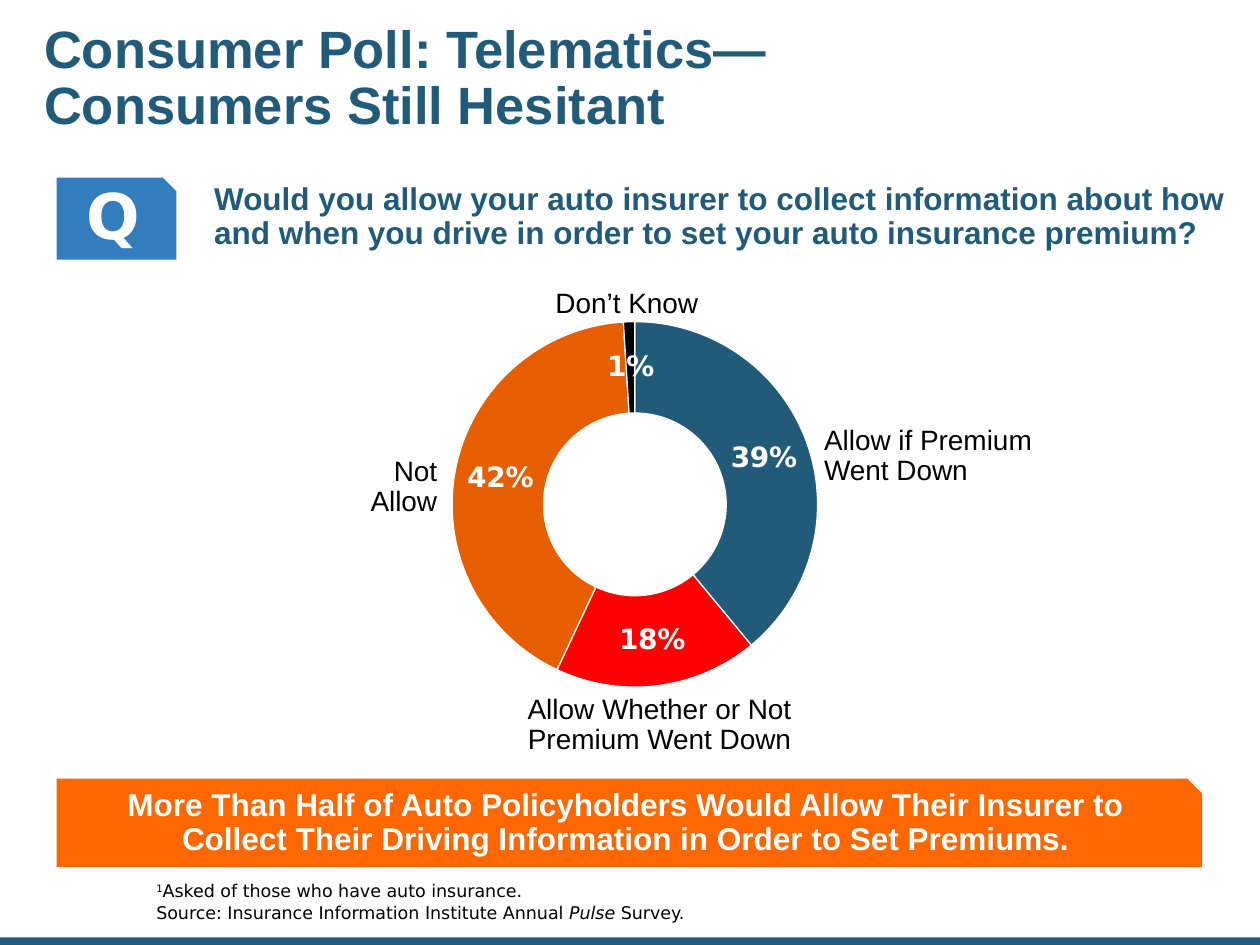
from copy import deepcopy
from dataclasses import dataclass

from lxml.etree import SubElement
from pptx import Presentation
from pptx.chart.data import CategoryChartData
from pptx.dml.color import RGBColor
from pptx.enum.chart import XL_CHART_TYPE
from pptx.enum.shapes import MSO_SHAPE
from pptx.enum.text import MSO_ANCHOR, MSO_AUTO_SIZE, PP_ALIGN
from pptx.oxml.ns import qn
from pptx.util import Inches, Pt


@dataclass(frozen=True)
class Theme:
    """Colours, fonts and type sizes of the slide."""
    navy: str = "225A7A"
    blue: str = "337DBE"
    orange: str = "FF6801"
    rust: str = "E75E01"
    red: str = "FF0000"
    black: str = "000000"
    white: str = "FFFFFF"
    sans: str = "Arial"
    wide: str = "DejaVu Sans"
    title: int = 30
    letter: int = 36
    lead: int = 18
    label: int = 16
    note: int = 10


THEME = Theme()
LEFT, MID, RIGHT = PP_ALIGN.LEFT, PP_ALIGN.CENTER, PP_ALIGN.RIGHT


def paint(font, size, color, face, bold=False):
    """Set the size, colour, face and weight of a font."""
    font.size, font.name, font.bold = Pt(size), face, bold
    font.color.rgb = RGBColor.from_string(color)


def write(shape, *paras, size=THEME.label, color=THEME.black, face=THEME.sans,
          bold=False, align=LEFT, anchor=MSO_ANCHOR.MIDDLE, pad=(0, 0, 0, 0),
          line=0.9, gap=0):
    """Fill a shape with paragraphs, each a string or a list of (text, mark) runs."""
    frame = shape.text_frame
    frame.word_wrap, frame.auto_size = True, MSO_AUTO_SIZE.NONE
    frame.vertical_anchor = anchor
    (frame.margin_left, frame.margin_top,
     frame.margin_right, frame.margin_bottom) = map(Inches, pad)
    for rank, text in enumerate(paras):
        para = frame.add_paragraph() if rank else frame.paragraphs[0]
        para.alignment, para.line_spacing = align, line
        para.space_before = Pt(gap if rank else 0)
        if isinstance(text, str):
            para.text = text
        else:
            for words, mark in text:
                run = para.add_run()
                run.text = words
                if mark == "italic":
                    run.font.italic = True
                elif mark == "super":
                    run._r.get_or_add_rPr().set("baseline", "30000")
        for run in para.runs:
            paint(run.font, size, color, face, bold)
        for brk in para._p.findall(qn("a:br")):
            brk.insert(0, deepcopy(para.runs[0]._r.rPr))


def place(shape, box):
    """Move and size a placeholder."""
    shape.left, shape.top, shape.width, shape.height = map(Inches, box)
    return shape


def panel(slide, kind, box, fill):
    """Add a plain filled shape."""
    shape = slide.shapes.add_shape(kind, *map(Inches, box))
    shape.shadow.inherit = False
    shape.fill.solid()
    shape.fill.fore_color.rgb = RGBColor.from_string(fill)
    shape.line.fill.background()
    return shape


def banner(slide, box, fill, text, **style):
    """Add a snipped box with bold white centred text."""
    write(panel(slide, MSO_SHAPE.SNIP_1_RECTANGLE, box, fill), text,
          color=THEME.white, bold=True, align=MID, pad=(0.1, 0.05, 0.1, 0.1), **style)


def label(slide, box, text, **style):
    """Add a text box."""
    write(slide.shapes.add_textbox(*map(Inches, box)), text, **style)


def lay_out(chart, frame, hole):
    """Fix the inner plot area and the size of the hole."""
    plot = chart._chartSpace.chart.plotArea
    for old in plot.findall(qn("c:layout")):
        plot.remove(old)
    layout = SubElement(plot, qn("c:layout"))
    plot.insert(0, layout)
    manual = SubElement(layout, qn("c:manualLayout"))
    pairs = [("layoutTarget", "inner"), ("xMode", "edge"), ("yMode", "edge")]
    for tag, val in pairs + list(zip("xywh", frame)):
        SubElement(manual, qn(f"c:{tag}")).set("val", str(val))
    ring = plot.find(qn("c:doughnutChart"))
    size = ring.find(qn("c:holeSize"))
    if size is None:
        size = SubElement(ring, qn("c:holeSize"))
    size.set("val", str(hole))


def donut(slide, box, parts):
    """Add the doughnut chart from (value, colour) parts."""
    data = CategoryChartData(number_format="0%")
    data.categories = [str(rank + 1) for rank in range(len(parts))]
    data.add_series("Series 1", [value for value, _ in parts])
    chart = slide.shapes.add_chart(
        XL_CHART_TYPE.DOUGHNUT, *map(Inches, box), data).chart
    chart.has_legend = chart.has_title = False
    paint(chart.font, THEME.lead, THEME.black, THEME.wide)
    plot = chart.plots[0]
    plot.vary_by_categories = True
    for rank, (_, color) in enumerate(parts):
        form = plot.series[0].points[rank].format
        form.fill.solid()
        form.fill.fore_color.rgb = RGBColor.from_string(color)
        form.line.color.rgb = RGBColor.from_string(THEME.white)
        form.line.width = Pt(0.75)
    plot.has_data_labels = True
    tags = plot.data_labels
    tags.show_value, tags.show_percentage = True, False
    tags.number_format, tags.number_format_is_linked = "0%", False
    paint(tags.font, THEME.label, THEME.white, THEME.wide, True)
    lay_out(chart, (0.32, 0.05, 0.37, 0.89), 50)


def main():
    """Build the slide and save it."""
    deck = Presentation()
    deck.slide_width, deck.slide_height = Inches(10), Inches(7.5)
    slide = deck.slides.add_slide(deck.slide_layouts[1])
    panel(slide, MSO_SHAPE.RECTANGLE, (0, 7.44, 10, 0.06), THEME.navy)

    write(place(slide.shapes.title, (0.3, 0.11, 9.25, 1.04)),
          "Consumer Poll: Telematics—\vConsumers Still Hesitant",
          size=THEME.title, color=THEME.navy, bold=True, pad=(0.05,) * 4)
    note = place(slide.placeholders[1], (1.24, 6.88, 8.4, 0.45))
    write(note,
          [("1", "super"), ("Asked of those who have auto insurance.", "")],
          [("Source: Insurance Information Institute Annual ", ""),
           ("Pulse", "italic"), (" Survey.", "")],
          size=THEME.note, face=THEME.wide, anchor=MSO_ANCHOR.BOTTOM,
          line=0.85, gap=2.5)
    for para in note.text_frame.paragraphs:
        props = para._p.get_or_add_pPr()
        props.set("marL", "0")
        props.set("indent", "0")
        SubElement(props, qn("a:buNone"))

    banner(slide, (0.45, 6.18, 9.09, 0.7), THEME.orange,
           "More Than Half of Auto Policyholders Would Allow Their Insurer to\v"
           "Collect Their Driving Information in Order to Set Premiums.",
           size=THEME.lead)
    banner(slide, (0.45, 1.41, 0.95, 0.65), THEME.blue, "Q",
           size=THEME.letter, face=THEME.wide)
    label(slide, (1.7, 1.45, 8.14, 0.55),
          "Would you allow your auto insurer to collect information about how "
          "and when you drive in order to set your auto insurance premium?",
          size=THEME.lead, color=THEME.navy, bold=True)

    donut(slide, (1.06, 2.39, 7.88, 3.26),
          [(0.39, THEME.navy), (0.18, THEME.red),
           (0.42, THEME.rust), (0.01, THEME.black)])
    label(slide, (6.54, 3.38, 2.01, 0.48), "Allow if Premium Went Down")
    label(slide, (3.78, 5.52, 2.91, 0.48),
          "Allow Whether or Not Premium Went Down", align=MID)
    label(slide, (2.22, 3.63, 1.25, 0.48), "Not\vAllow", align=RIGHT)
    label(slide, (3.52, 2.3, 2.91, 0.24), "Don’t Know", align=MID)
    deck.save("out.pptx")


if __name__ == "__main__":
    main()
